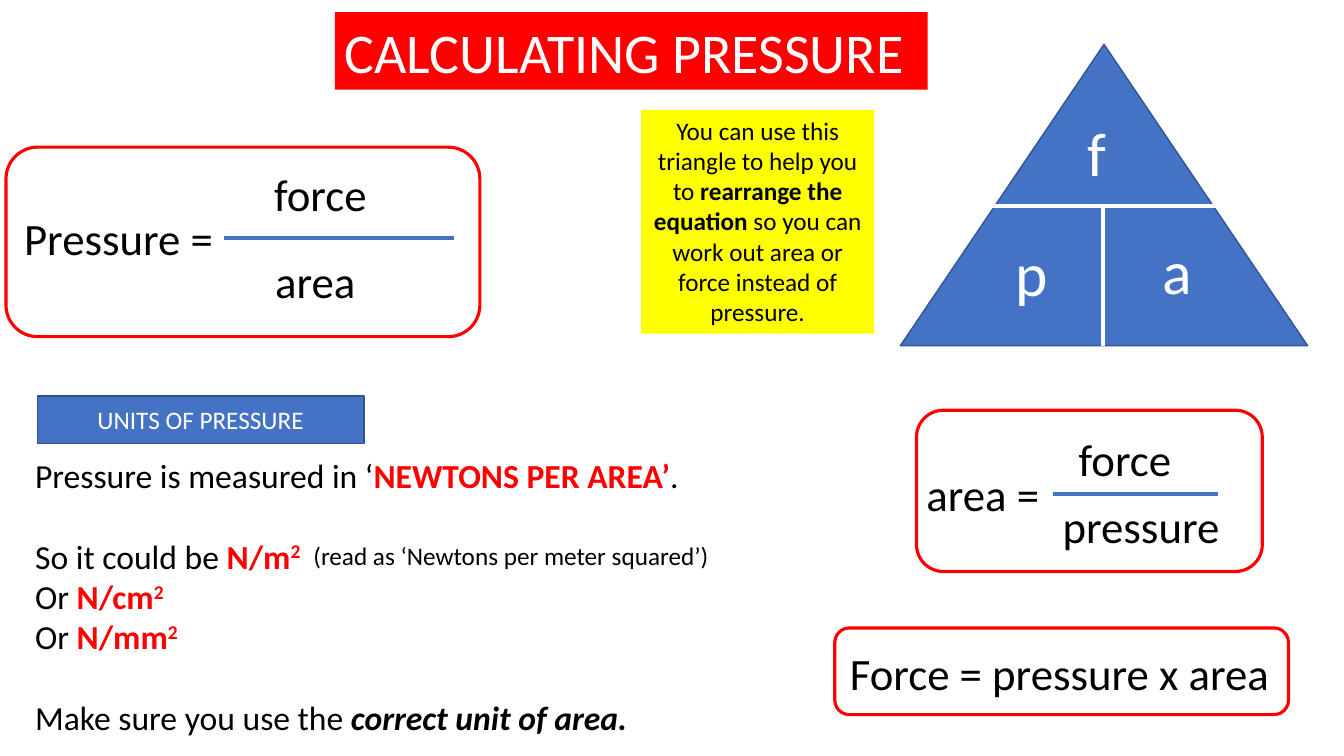
from dataclasses import dataclass
from typing import NamedTuple

from lxml import etree
from pptx import Presentation
from pptx.dml.color import RGBColor
from pptx.enum.shapes import MSO_CONNECTOR, MSO_SHAPE
from pptx.enum.text import MSO_ANCHOR, MSO_AUTO_SIZE, PP_ALIGN
from pptx.oxml.ns import qn
from pptx.util import Emu, Pt

PX = 9144
FONT = "Calibri"
RED = RGBColor(0xFF, 0x00, 0x00)
YELLOW = RGBColor(0xFF, 0xFF, 0x00)
BLUE = RGBColor(0x44, 0x72, 0xC4)
DARK_BLUE = RGBColor(0x32, 0x54, 0x91)
WHITE = RGBColor(0xFF, 0xFF, 0xFF)
BLACK = RGBColor(0x00, 0x00, 0x00)

RECT = MSO_SHAPE.RECTANGLE
ROUNDED = MSO_SHAPE.ROUNDED_RECTANGLE
TRIANGLE = MSO_SHAPE.ISOSCELES_TRIANGLE
STRAIGHT = MSO_CONNECTOR.STRAIGHT
LEFT, CENTER = PP_ALIGN.LEFT, PP_ALIGN.CENTER
TOP, MIDDLE = MSO_ANCHOR.TOP, MSO_ANCHOR.MIDDLE
GROW = MSO_AUTO_SIZE.SHAPE_TO_FIT_TEXT
RIGHT_SIDE = 3


class Box(NamedTuple):
    left: int
    top: int
    width: int
    height: int

    def emu(self):
        return [Emu(length * PX) for length in self]


class Span(NamedTuple):
    text: str
    color: RGBColor | None = None
    bold: bool = False
    italic: bool = False
    raised: bool = False


@dataclass(frozen=True)
class Line:
    spans: list[Span]
    space_before: int = 0


@dataclass(frozen=True)
class Label:
    text: str
    box: Box


@dataclass(frozen=True)
class Fraction:
    subject: Label
    numerator: Label
    denominator: Label
    bar_end: int
    frame: Box


PRESSURE = Fraction(
    Label("Pressure =", Box(14, 204, 208, 64)),
    Label("force", Box(262, 161, 136, 64)),
    Label("area", Box(263, 247, 122, 64)),
    450,
    Box(6, 146, 470, 188),
)
AREA = Fraction(
    Label("area =", Box(909, 458, 135, 64)),
    Label("force", Box(1060, 423, 135, 64)),
    Label("pressure", Box(1044, 490, 208, 64)),
    1208,
    Box(909, 407, 343, 160),
)
TRIANGLE_LETTERS = [
    Label("f", Box(1069, 109, 72, 84)),
    Label("p", Box(997, 228, 72, 84)),
    Label("a", Box(1143, 226, 72, 84)),
]
TRIANGLE_DIVIDERS = [(983, 204, 1206, 204), (1094, 204, 1094, 343)]


def unit_line(lead: str, unit: str, space_before: int = 0) -> Line:
    return Line([Span(lead), Span(unit, RED, bold=True),
                 Span("2", RED, bold=True, raised=True)], space_before)


UNIT_LINES = [
    Line([Span("Pressure is measured in ‘"),
          Span("NEWTONS PER AREA’", RED, bold=True), Span(".")]),
    unit_line("So it could be ", "N/m", 29),
    unit_line("Or ", "N/cm"),
    unit_line("Or ", "N/mm"),
    Line([Span("Make sure you use the "),
          Span("correct unit of area.", bold=True, italic=True)], 29),
]
TRIANGLE_HINT = [Line([
    Span("You can use this triangle to help you to "),
    Span("rearrange the equation ", bold=True),
    Span("so you can work out area or force instead of pressure."),
])]


def write(shape, text: str | list[Line], *, size: int, color: RGBColor = BLACK,
          align=LEFT, anchor=TOP, grow: bool = True) -> None:
    frame = shape.text_frame
    frame.word_wrap = True
    frame.vertical_anchor = anchor
    if grow:
        frame.auto_size = GROW
    if align == LEFT:
        frame.margin_right = 0
    lines = [Line([Span(text)])] if isinstance(text, str) else text
    for index, line in enumerate(lines):
        paragraph = frame.add_paragraph() if index else frame.paragraphs[0]
        paragraph.alignment = align
        if line.space_before:
            paragraph.space_before = Pt(line.space_before)
        for span in line.spans:
            run = paragraph.add_run()
            run.text = span.text
            run.font.name = FONT
            run.font.size = Pt(size)
            run.font.bold = span.bold
            run.font.italic = span.italic
            run.font.color.rgb = span.color or color
            if span.raised:
                run._r.get_or_add_rPr().set("baseline", "30000")


def add_text(shapes, box: Box, text: str | list[Line], *, size: int,
             color: RGBColor = BLACK):
    text_box = shapes.add_textbox(*box.emu())
    write(text_box, text, size=size, color=color)
    return text_box


def add_panel(shapes, kind, box: Box, *, fill: RGBColor | None = None,
              line: RGBColor | None = None, weight: float = 1):
    panel = shapes.add_shape(kind, *box.emu())
    panel.shadow.inherit = False
    if fill is None:
        panel.fill.background()
    else:
        panel.fill.solid()
        panel.fill.fore_color.rgb = fill
    if line is None:
        panel.line.fill.background()
    else:
        panel.line.color.rgb = line
        panel.line.width = Pt(weight)
    return panel


def add_rule(shapes, ends: tuple[int, int, int, int], color: RGBColor):
    rule = shapes.add_connector(STRAIGHT, *[Emu(end * PX) for end in ends])
    rule.line.color.rgb = color
    rule.line.width = Pt(3)
    etree.SubElement(rule._element.spPr, qn("a:effectLst"))
    return rule


def add_frame(shapes, box: Box) -> None:
    add_panel(shapes, ROUNDED, box, line=RED, weight=2.25)


def add_fraction(slide, fraction: Fraction) -> None:
    shapes = slide.shapes.add_group_shape().shapes
    subject = add_text(shapes, fraction.subject.box, fraction.subject.text, size=32)
    for part in (fraction.numerator, fraction.denominator):
        add_text(shapes, part.box, part.text, size=32)
    box = fraction.subject.box
    middle = box.top + box.height // 2
    bar = add_rule(shapes, (box.left + box.width, middle, fraction.bar_end, middle), BLUE)
    bar.begin_connect(subject, RIGHT_SIDE)
    add_frame(shapes, fraction.frame)


def add_formula_triangle(slide) -> None:
    shapes = slide.shapes.add_group_shape().shapes
    add_panel(shapes, TRIANGLE, Box(893, 44, 404, 299), fill=BLUE, line=DARK_BLUE)
    for divider in TRIANGLE_DIVIDERS:
        add_rule(shapes, divider, WHITE)
    for letter in TRIANGLE_LETTERS:
        add_text(shapes, letter.box, letter.text, size=44, color=WHITE)


def main() -> None:
    deck = Presentation()
    deck.slide_width, deck.slide_height = Emu(1333 * PX), Emu(750 * PX)
    slide = deck.slides.add_slide(deck.slide_layouts[6])
    shapes = slide.shapes

    title = add_panel(shapes, RECT, Box(332, 12, 588, 77), fill=RED)
    write(title, "CALCULATING PRESSURE", size=40, color=WHITE)
    add_fraction(slide, PRESSURE)
    add_formula_triangle(slide)
    add_text(shapes, Box(25, 446, 673, 310), UNIT_LINES, size=24)
    add_text(shapes, Box(833, 636, 441, 64), "Force = pressure x area", size=32)
    add_fraction(slide, AREA)
    add_frame(shapes, Box(828, 623, 450, 86))
    hint = add_panel(shapes, RECT, Box(636, 109, 231, 222), fill=YELLOW)
    write(hint, TRIANGLE_HINT, size=18, align=CENTER)
    heading = add_panel(shapes, RECT, Box(37, 393, 324, 47), fill=BLUE, line=DARK_BLUE)
    write(heading, "UNITS OF PRESSURE", size=18, color=WHITE, align=CENTER,
          anchor=MIDDLE, grow=False)
    add_text(shapes, Box(301, 531, 482, 40), "(read as ‘Newtons per meter squared’)", size=18)
    deck.save("out.pptx")


if __name__ == "__main__":
    main()
